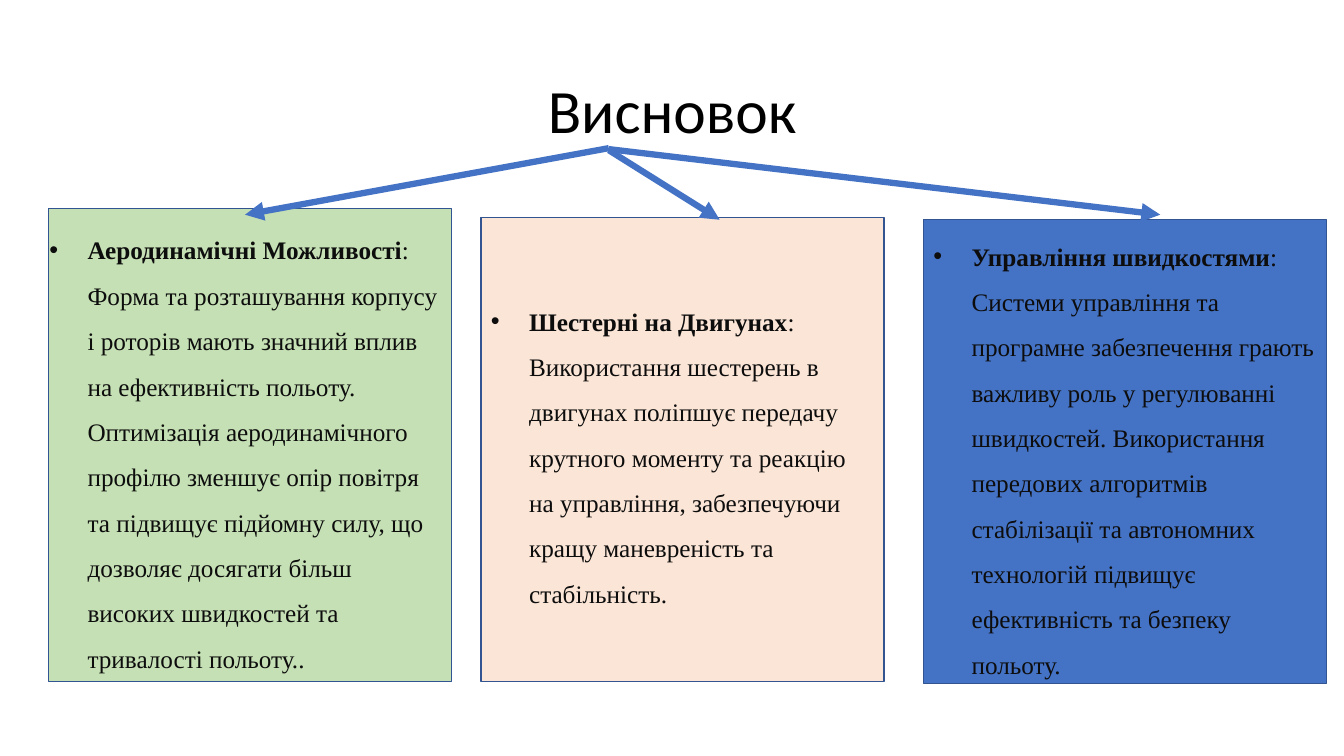
from dataclasses import dataclass

from lxml.etree import SubElement
from pptx import Presentation
from pptx.dml.color import RGBColor
from pptx.enum.shapes import MSO_CONNECTOR, MSO_SHAPE
from pptx.enum.text import MSO_ANCHOR, PP_ALIGN
from pptx.oxml.ns import qn
from pptx.util import Inches, Pt

SLIDE_WIDTH, SLIDE_HEIGHT = Inches(13.33), Inches(7.5)
COLUMNS = ROWS = 100


@dataclass(frozen=True)
class Theme:
    title_font: str = "Calibri"
    body_font: str = "Times New Roman"
    title_size: float = 44
    body_size: float = 18
    border_width: float = 1
    arrow_width: float = 4.5
    title_ink: str = "000000"
    body_ink: str = "0D0D0D"
    border: str = "325491"
    blue: str = "4472C4"
    green: str = "C5E0B4"
    peach: str = "FBE5D6"


THEME = Theme()

AERODYNAMICS = (
    "Аеродинамічні Можливості",
    ": Форма та розташування корпусу і роторів мають значний вплив на "
    "ефективність польоту. Оптимізація аеродинамічного профілю зменшує опір "
    "повітря та підвищує підйомну силу, що дозволяє досягати більш високих "
    "швидкостей та тривалості польоту..",
)
GEARS = (
    "Шестерні на Двигунах",
    ": Використання шестерень в двигунах поліпшує передачу крутного моменту "
    "та реакцію на управління, забезпечуючи кращу маневреність та стабільність.",
)
SPEED_CONTROL = (
    "Управління швидкостями",
    ": Системи управління та програмне забезпечення грають важливу роль у "
    "регулюванні швидкостей. Використання передових алгоритмів стабілізації "
    "та автономних технологій підвищує ефективність та безпеку польоту.",
)


def grid(column, row):
    """Turn a grid column and row into slide lengths."""
    return round(SLIDE_WIDTH * column / COLUMNS), round(SLIDE_HEIGHT * row / ROWS)


def add_span(para, text, font_name, size, ink, bold=False):
    span = para.add_run()
    span.text = text
    span.font.name = font_name
    span.font.size = Pt(size)
    span.font.bold = bold
    span.font.color.rgb = RGBColor.from_string(ink)


def add_text_box(page, column, row, width, height, anchor=MSO_ANCHOR.TOP):
    box = page.shapes.add_textbox(*grid(column, row), *grid(width, height))
    box.text_frame.word_wrap = True
    box.text_frame.vertical_anchor = anchor
    return box


def add_card(page, column, row, width, height, fill):
    card = page.shapes.add_shape(
        MSO_SHAPE.RECTANGLE, *grid(column, row), *grid(width, height))
    card.shadow.inherit = False
    card.fill.solid()
    card.fill.fore_color.rgb = RGBColor.from_string(fill)
    card.line.color.rgb = RGBColor.from_string(THEME.border)
    card.line.width = Pt(THEME.border_width)
    card.text_frame.word_wrap = True
    card.text_frame.vertical_anchor = MSO_ANCHOR.MIDDLE
    return card


def add_title(page, text):
    box = add_text_box(page, 6.9, 5.33, 86.25, 19.33, MSO_ANCHOR.MIDDLE)
    para = box.text_frame.paragraphs[0]
    para.alignment = PP_ALIGN.CENTER
    para.line_spacing = 0.9
    add_span(para, text, THEME.title_font, THEME.title_size, THEME.title_ink)


def write_conclusion(box, conclusion):
    """Fill a box with one bullet: a bold heading and its explanation."""
    para = box.text_frame.paragraphs[0]
    para.alignment = PP_ALIGN.LEFT
    para.line_spacing = 1.5
    properties = para._p.get_or_add_pPr()
    indent = Inches(0.38)
    properties.set("marL", str(indent))
    properties.set("indent", str(-indent))
    SubElement(properties, qn("a:buFont"), typeface="Arial")
    SubElement(properties, qn("a:buChar"), char="•")
    tabs = SubElement(properties, qn("a:tabLst"))
    SubElement(tabs, qn("a:tab"), pos=str(Inches(0.5)), algn="l")
    heading, explanation = conclusion
    style = THEME.body_font, THEME.body_size, THEME.body_ink
    add_span(para, heading, *style, bold=True)
    add_span(para, explanation, *style)


def add_arrow(page, start, end):
    arrow = page.shapes.add_connector(
        MSO_CONNECTOR.STRAIGHT, *grid(*start), *grid(*end))
    arrow.line.color.rgb = RGBColor.from_string(THEME.blue)
    arrow.line.width = Pt(THEME.arrow_width)
    SubElement(arrow.line._get_or_add_ln(), qn("a:tailEnd"), type="triangle")
    SubElement(arrow._element.spPr, qn("a:effectLst"))


def main():
    deck = Presentation()
    deck.slide_width, deck.slide_height = SLIDE_WIDTH, SLIDE_HEIGHT
    page = deck.slides.add_slide(deck.slide_layouts[6])

    add_card(page, 68.7, 29.07, 30, 61.33, THEME.blue)
    add_card(page, 3.6, 27.6, 30, 62.53, THEME.green)
    add_title(page, "Висновок")
    write_conclusion(add_text_box(page, 2.93, 28.4, 30.68, 61.33), AERODYNAMICS)
    gears_card = add_card(page, 35.78, 28.8, 30, 61.33, THEME.peach)
    write_conclusion(gears_card, GEARS)

    arrows = ((19.6, (18.23, 28.4)), (19.87, (53.55, 29.07)), (19.73, (86.33, 28.4)))
    for start_row, tip in arrows:
        add_arrow(page, (45.3, start_row), tip)
    write_conclusion(add_text_box(page, 68.7, 29.2, 30, 61.2), SPEED_CONTROL)

    deck.save("out.pptx")


if __name__ == "__main__":
    main()
